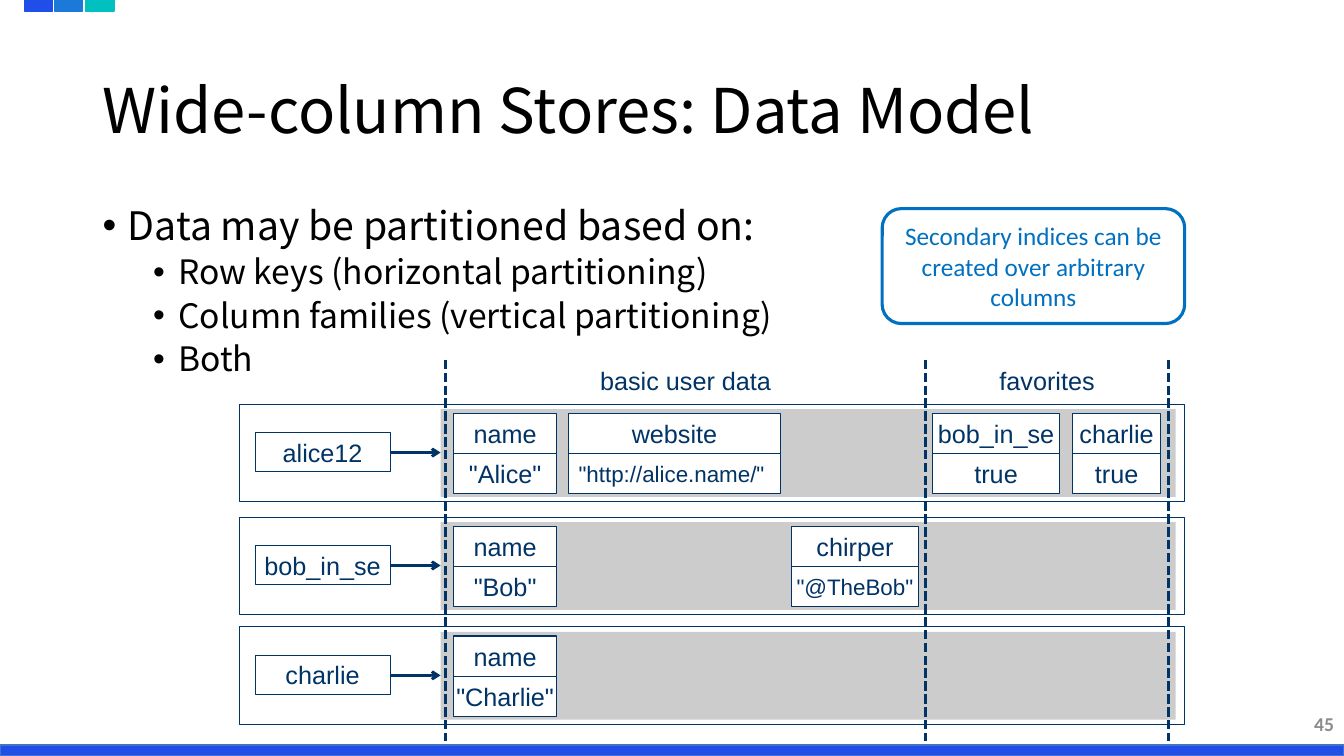
"""Builds the slide on the data model of wide-column stores."""
from lxml import etree
from pptx import Presentation
from pptx import util as u
from pptx.dml.color import RGBColor
from pptx.enum import dml, shapes, text
from pptx.oxml import ns

PX = 9144
NAVY = "003366"
SANS = "Noto Sans CJK KR"
LEFT, MID, RIGHT = text.PP_ALIGN.LEFT, text.PP_ALIGN.CENTER, text.PP_ALIGN.RIGHT
TOP, CORE = text.MSO_ANCHOR.TOP, text.MSO_ANCHOR.MIDDLE
RECT, ROUND = shapes.MSO_SHAPE.RECTANGLE, shapes.MSO_SHAPE.ROUNDED_RECTANGLE

ROWS = [
    (401, "alice12", [
        (450, 102, "name", '"Alice"', 18, MID),
        (564, 210, "website", '"http://alice.name/"', 16, LEFT),
        (925, 126, "bob_in_se", "true", 18, MID),
        (1064, 87, "charlie", "true", 18, MID)]),
    (513, "bob_in_se", [
        (450, 102, "name", '"Bob"', 18, MID),
        (785, 126, "chirper", '"@TheBob"', 16, MID)]),
    (622, "charlie", [
        (450, 102, "name", '"Charlie"', 18, MID)]),
]
BARS = [442, 918, 1159]
HEADS = ["basic user data", "favorites"]
POINTS = [
    "Data may be partitioned based on:",
    "Row keys (horizontal partitioning)",
    "Column families (vertical partitioning)",
    "Both",
]


def color(code):
    """Turn a hex string into a colour."""
    return RGBColor.from_string(code)


def style(para, size, hue, face, align=LEFT, bold=False):
    """Set the font and alignment of a paragraph."""
    para.alignment = align
    para.font.size = u.Pt(size)
    para.font.name = face
    para.font.bold = bold
    para.font.color.rgb = color(hue)


def box(slide, area, fill=None, line=None, width=0, kind=RECT):
    """Draw a preset shape."""
    shape = slide.shapes.add_shape(kind, *[n * PX for n in area])
    shape.shadow.inherit = False
    if fill:
        shape.fill.solid()
        shape.fill.fore_color.rgb = color(fill)
    else:
        shape.fill.background()
    if line:
        shape.line.color.rgb = color(line)
        shape.line.width = u.Pt(width)
    else:
        shape.line.fill.background()
    return shape


def write(shape, words, size, hue, face, align=MID, wrap=False, anchor=CORE, bold=False):
    """Put one paragraph into a shape."""
    frame = shape.text_frame
    frame.word_wrap = wrap
    frame.vertical_anchor = anchor
    para = frame.paragraphs[0]
    para.text = words
    style(para, size, hue, face, align, bold)
    return para


def label(slide, area, *args, **opts):
    """Add a text box with one paragraph."""
    return write(slide.shapes.add_textbox(*[n * PX for n in area]), *args, **opts)


def cell(slide, area, words, fill=None, size=18, align=MID):
    """Draw a thin-lined box with text."""
    write(box(slide, area, fill, NAVY), words, size, NAVY, "Arial", align)


def rule(slide, ends, width):
    """Draw a straight line between two points."""
    line = slide.shapes.add_connector(
        shapes.MSO_CONNECTOR.STRAIGHT, *[n * PX for n in ends])
    line.line.color.rgb = color(NAVY)
    line.line.width = u.Pt(width)
    etree.SubElement(line.line._get_or_add_ln().getparent(), ns.qn("a:effectLst"))
    return line


def arrow(slide, ends):
    """Draw a thin arrow."""
    line = rule(slide, ends, 0)
    etree.SubElement(line.line._get_or_add_ln(), ns.qn("a:tailEnd"), type="arrow")


def record(slide, top, key, cells):
    """Draw one row with its key and columns."""
    cell(slide, (253, top + 28, 134, 39), key)
    box(slide, (437, top + 5, 729, 87), "CCCCCC")
    arrow(slide, (387, top + 48, 437, top + 48))
    for left, width, name, value, size, align in cells:
        cell(slide, (left, top + 9, width, 40), name, "FFFFFF")
        cell(slide, (left, top + 49, width, 40), value, "FFFFFF", size, align)
    box(slide, (238, top, 937, 97), line=NAVY)


def points(slide):
    """Write the bulleted list."""
    frame = slide.shapes.add_textbox(*[n * PX for n in (92, 200, 1150, 476)]).text_frame
    frame.word_wrap = True
    for i, words in enumerate(POINTS):
        para = frame.add_paragraph() if i else frame.paragraphs[0]
        para.text = words
        para.level = min(i, 1)
        para.line_spacing = 0.9
        para.space_before = u.Pt(5 if i else 0)
        props = para._p.get_or_add_pPr()
        props.set("marL", str((75 if i else 25) * PX))
        props.set("indent", str(-25 * PX))
        etree.SubElement(props, ns.qn("a:buFont"), typeface="Arial")
        etree.SubElement(props, ns.qn("a:buChar"), char="•")
        style(para, 24 if i else 28, "000000", SANS)


def main():
    """Build and save the slide."""
    deck = Presentation()
    deck.slide_width, deck.slide_height = 1333 * PX, 750 * PX
    slide = deck.slides.add_slide(deck.slide_layouts[6])
    box(slide, (0, 739, 1333, 11), "1F4EE9", "4472C4", 1)
    for left, hue in zip((24, 54, 85), ("1F4EE9", "1B7AD9", "00C0C0")):
        box(slide, (left, 0, 28, 11), hue, hue, 1)
    title = label(slide, (92, 40, 1150, 145), "Wide-column Stores: Data Model",
                  44, "000000", SANS, LEFT, True)
    title.line_spacing = 0.9
    points(slide)
    label(slide, (1033, 698, 300, 40), "45", 14, "8C8C8C", "Calibri", RIGHT, True, bold=True)
    for row in ROWS:
        record(slide, *row)
    for left in BARS:
        line = rule(slide, (left, 357, left, 735), 2.3)
        line.line.dash_style = dml.MSO_LINE.SQUARE_DOT
    for left, right, words in zip(BARS, BARS[1:], HEADS):
        label(slide, (left, 357, right - left, 38), words, 18, NAVY, "Arial", anchor=TOP)
    note = box(slide, (875, 207, 300, 114), None, "0070C0", 2.25, ROUND)
    write(note, "Secondary indices can be created over arbitrary columns",
          18, "0070C0", "Calibri", wrap=True)
    deck.save("out.pptx")


if __name__ == "__main__":
    main()
